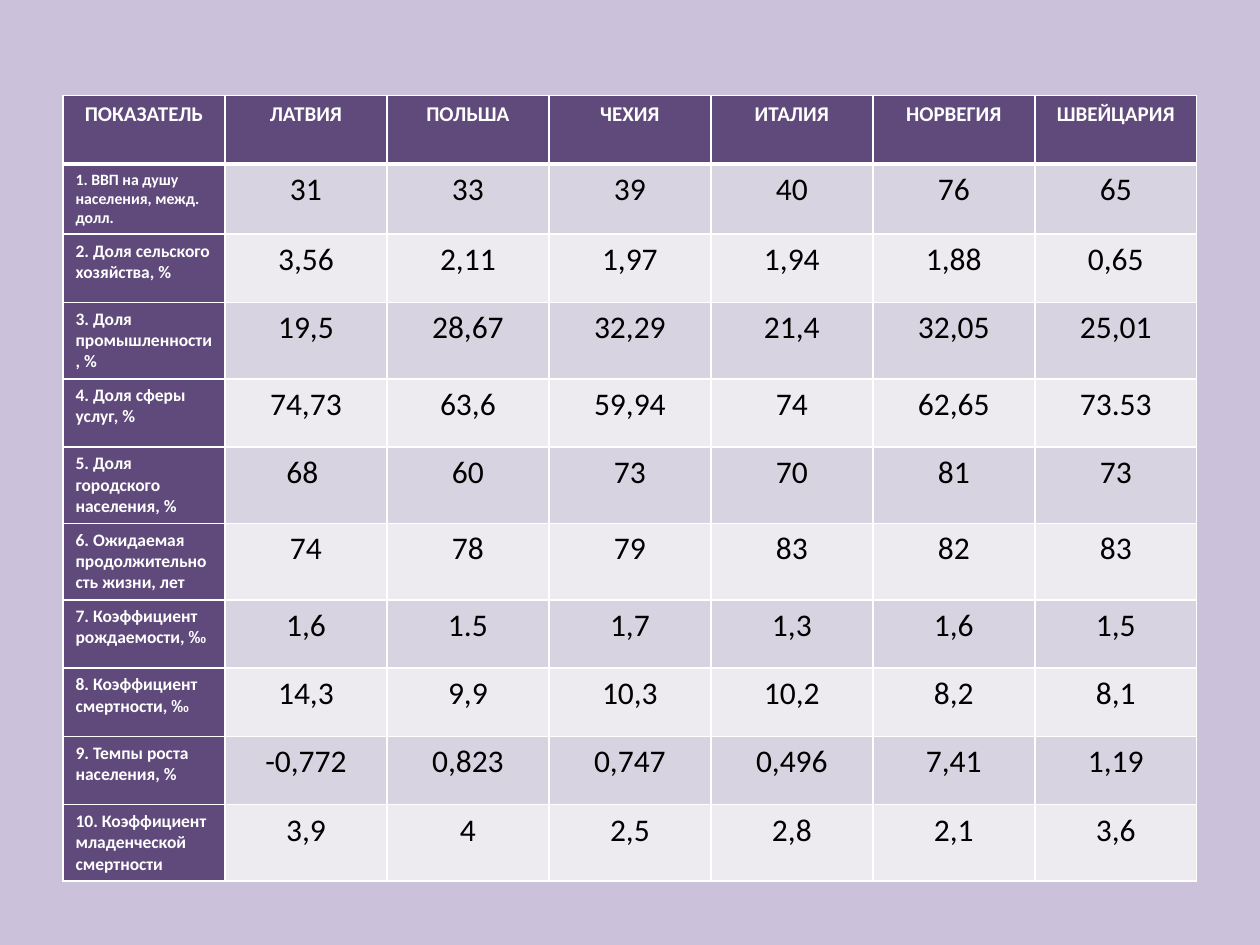
import dataclasses

import lxml.etree
import pptx
import pptx.dml.color
import pptx.enum.text
import pptx.oxml.ns
import pptx.util

Cm = pptx.util.Cm
CENTER = pptx.enum.text.PP_ALIGN.CENTER
LEFT = pptx.enum.text.PP_ALIGN.LEFT


@dataclasses.dataclass(frozen=True)
class Theme:
    """Colours, fonts and type sizes of the slide."""
    background: str = "CCC1DA"
    heading_fill: str = "604A7B"
    bands: tuple = ("D8D3E0", "EDEAF0")
    light: str = "FFFFFF"
    dark: str = "000000"
    font: str = "Calibri"
    symbol_font: str = "Arial"
    country_size: float = 12
    indicator_size: float = 10
    long_indicator_size: float = 9
    value_size: float = 18
    thin: float = 1
    thick: float = 3


THEME = Theme()

COUNTRIES = ["ПОКАЗАТЕЛЬ", "ЛАТВИЯ", "ПОЛЬША", "ЧЕХИЯ", "ИТАЛИЯ", "НОРВЕГИЯ", "ШВЕЙЦАРИЯ"]
INDICATORS = [
    ("1. ВВП на душу населения, межд. долл.", "31", "33", "39", "40", "76", "65"),
    ("2. Доля сельского хозяйства, %", "3,56", "2,11", "1,97", "1,94", "1,88", "0,65"),
    ("3. Доля промышленности, %", "19,5", "28,67", "32,29", "21,4", "32,05", "25,01"),
    ("4. Доля сферы услуг, %", "74,73", "63,6", "59,94", "74", "62,65", "73.53"),
    ("5. Доля городского населения, %", "68 ", "60", "73", "70", "81", "73"),
    ("6. Ожидаемая продолжительность жизни, лет", "74", "78", "79", "83", "82", "83"),
    ("7. Коэффициент рождаемости, ‰", "1,6", "1.5", "1,7", "1,3", "1,6", "1,5"),
    ("8. Коэффициент смертности, ‰", "14,3", "9,9", "10,3", "10,2", "8,2", "8,1"),
    ("9. Темпы роста населения, %", "-0,772", "0,823", "0,747", "0,496", "7,41", "1,19"),
    ("10. Коэффициент младенческой смертности", "3,9", "4", "2,5", "2,8", "2,1", "3,6"),
]


def rgb(value):
    """Return the colour for a hexadecimal string."""
    return pptx.dml.color.RGBColor.from_string(value)


def write(frame, text, *, size, color, bold=False, align=CENTER):
    """Write one paragraph, with the per mille sign in the symbol font."""
    paragraph = frame.paragraphs[0]
    paragraph.alignment = align
    wording, sign, _ = text.partition("‰")
    for part, font in ((wording, THEME.font), (sign, THEME.symbol_font)):
        if part:
            run = paragraph.add_run()
            run.text = part
            run.font.name = font
            run.font.size = pptx.util.Pt(size)
            run.font.bold = bold
            run.font.color.rgb = rgb(color)


def rule_cell(cell, **widths):
    """Draw the borders of a cell, given a width in points for each side."""
    properties = cell._tc.get_or_add_tcPr()
    qn = pptx.oxml.ns.qn
    for position, side in enumerate("LRTB"):
        width = pptx.util.Pt(widths.get(side, THEME.thin))
        line = lxml.etree.Element(qn(f"a:ln{side}"), w=str(int(width)))
        fill = lxml.etree.SubElement(line, qn("a:solidFill"))
        lxml.etree.SubElement(fill, qn("a:srgbClr"), val=THEME.light)
        properties.insert(position, line)


def indicator_table(slide, left, top, width, height):
    """Place the table of indicators by country in the given box."""
    rows = [COUNTRIES, *INDICATORS]
    table = slide.shapes.add_table(len(rows), len(COUNTRIES), left, top, width, height).table
    for r, row in enumerate(rows):
        for c, text in enumerate(row):
            cell = table.cell(r, c)
            cell.fill.solid()
            if r == 0:
                fill = THEME.heading_fill
                style = dict(size=THEME.country_size, color=THEME.light, bold=True)
            elif c == 0:
                fill = THEME.heading_fill
                size = THEME.long_indicator_size if r == 1 else THEME.indicator_size
                style = dict(size=size, color=THEME.light, bold=True, align=LEFT)
            else:
                fill = THEME.bands[(r - 1) % 2]
                style = dict(size=THEME.value_size, color=THEME.dark)
            cell.fill.fore_color.rgb = rgb(fill)
            write(cell.text_frame, text, **style)
            rule_cell(cell, T=THEME.thick if r == 1 else THEME.thin,
                      B=THEME.thick if r == 0 else THEME.thin)


def main():
    """Build and save the slide."""
    deck = pptx.Presentation()
    deck.slide_width, deck.slide_height = Cm(25.4), Cm(19.05)
    slide = deck.slides.add_slide(deck.slide_layouts[6])
    slide.background.fill.solid()
    slide.background.fill.fore_color.rgb = rgb(THEME.background)
    indicator_table(slide, Cm(1.27), Cm(1.93), Cm(22.86), Cm(15.15))
    deck.save("out.pptx")


if __name__ == "__main__":
    main()
